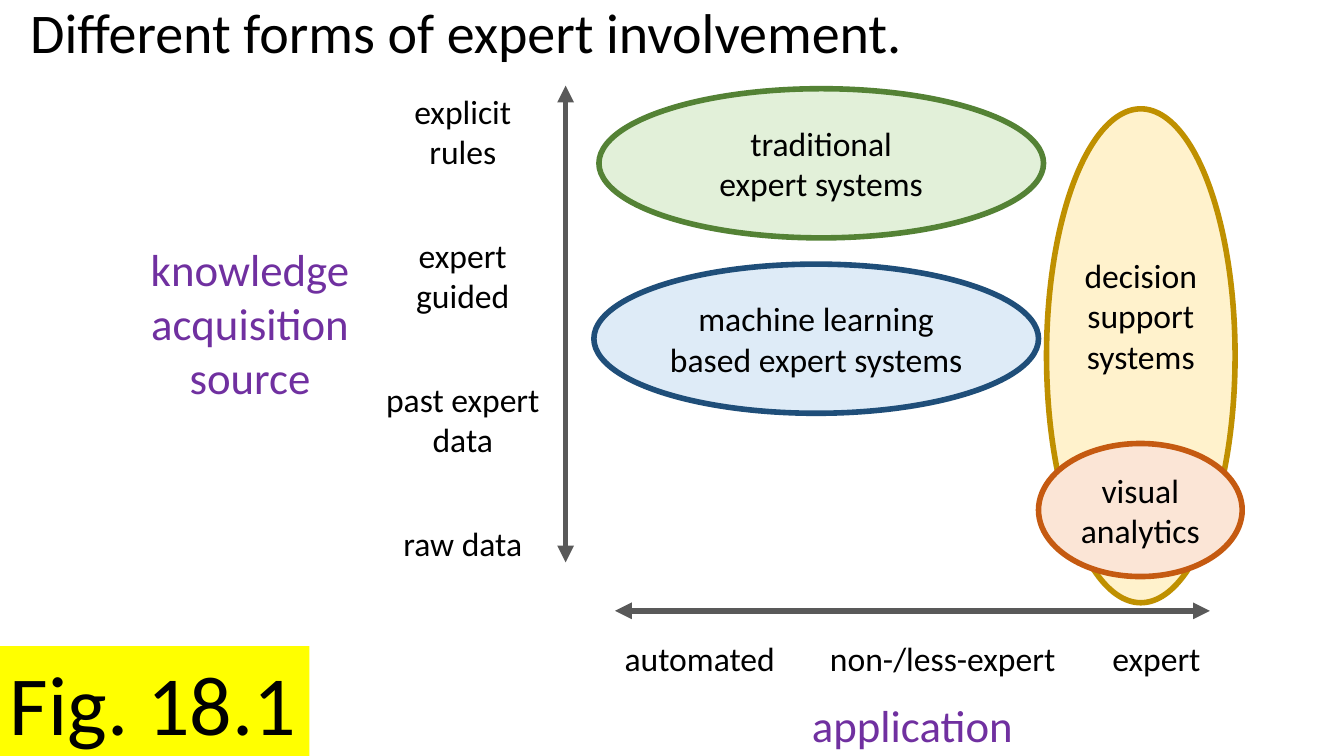
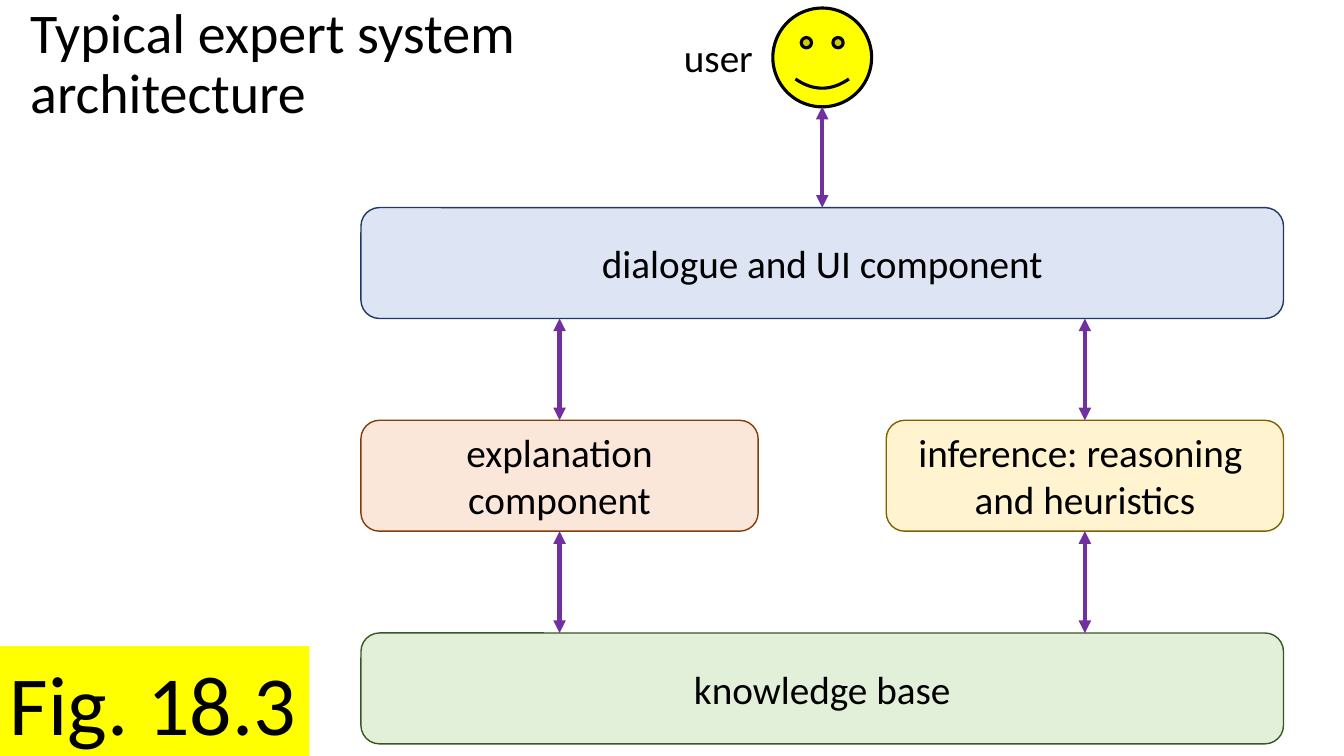
from collections import namedtuple

from lxml.etree import SubElement
from pptx import Presentation
from pptx.dml.color import RGBColor
from pptx.enum.shapes import MSO_CONNECTOR, MSO_SHAPE
from pptx.enum.text import MSO_ANCHOR, MSO_AUTO_SIZE, PP_ALIGN
from pptx.oxml.ns import qn
from pptx.util import Pt

EMU_PER_PX = 9144
FONT = "Calibri"
BLACK, YELLOW, PURPLE, GREY = "000000", "FFFF00", "7030A0", "595959"

Box = namedtuple("Box", "left top width height")
SLIDE = Box(0, 0, 1333, 750)
TITLE = Box(20, 0, 1293, 178)
FIGURE_TAG = Box(0, 641, 307, 111)
TOP, BOTTOM = 0, 2


def px(length):
    """Turn px into whole EMU."""
    return round(length * EMU_PER_PX)


def emu(box):
    """Turn every length of a box into EMU."""
    return [px(length) for length in box]


def rgb(code):
    """Turn a hex string into a colour."""
    return RGBColor.from_string(code)


def write(frame, text, size, color=BLACK, align=PP_ALIGN.CENTER):
    """Fill a text frame and format all its paragraphs alike."""
    frame.text = text
    for paragraph in frame.paragraphs:
        paragraph.alignment = align
        paragraph.font.size = Pt(size)
        paragraph.font.name = FONT
        paragraph.font.color.rgb = rgb(color)


def add_label(parts, text, center, top, width, size=24, color=BLACK):
    """Place unwrapped text centred on an x position."""
    lines = len(text.splitlines())
    height = 10 + lines * size * 5 // 3
    label = parts.add_textbox(*emu(Box(center - width / 2, top, width, height)))
    label.text_frame.word_wrap = False
    label.text_frame.auto_size = MSO_AUTO_SIZE.SHAPE_TO_FIT_TEXT
    write(label.text_frame, text, size, color)


def add_panel(parts, kind, box, fill, outline=None, weight=1, opacity=100):
    """Draw a filled preset shape without a shadow."""
    panel = parts.add_shape(kind, *emu(box))
    panel.shadow.inherit = False
    panel.fill.solid()
    panel.fill.fore_color.rgb = rgb(fill)
    if opacity < 100:
        tint = panel.fill._xPr.find(qn("a:solidFill"))[0]
        SubElement(tint, qn("a:alpha"), val=str(opacity * 1000))
    if outline:
        panel.line.color.rgb = rgb(outline)
        panel.line.width = Pt(weight)
    else:
        panel.line.fill.background()
    return panel


def add_double_arrow(parts, start, end, color, weight):
    """Draw a straight line with a triangle at both ends."""
    arrow = parts.add_connector(MSO_CONNECTOR.STRAIGHT, *emu(start + end))
    arrow.line.color.rgb = rgb(color)
    arrow.line.width = Pt(weight)
    outline = arrow.line._get_or_add_ln()
    for tip in ("a:headEnd", "a:tailEnd"):
        SubElement(outline, qn(tip), type="triangle")
    SubElement(arrow._element.spPr, qn("a:effectLst"))
    return arrow


def add_figure_slide(deck, title, figure):
    """Add a titled slide with its figure tag and return its diagram group."""
    slide = deck.slides.add_slide(deck.slide_layouts[5])
    heading = slide.shapes.title
    heading.left, heading.top, heading.width, heading.height = emu(TITLE)
    write(heading.text_frame, title, 40, align=PP_ALIGN.LEFT)
    heading.text_frame.paragraphs[0].line_spacing = 0.9
    heading.text_frame.vertical_anchor = MSO_ANCHOR.TOP
    heading.text_frame.auto_size = MSO_AUTO_SIZE.NONE
    diagram = slide.shapes.add_group_shape().shapes
    tag = add_panel(slide.shapes, MSO_SHAPE.RECTANGLE, FIGURE_TAG, YELLOW)
    tag.text_frame.word_wrap = False
    tag.text_frame.auto_size = MSO_AUTO_SIZE.SHAPE_TO_FIT_TEXT
    write(tag.text_frame, figure, 60, align=PP_ALIGN.LEFT)
    return diagram


def draw_axes(parts, box):
    """Draw the source and application axes with their labels."""
    left, top = box.left, box.top
    source_x, application_y = left + 423, top + 521
    add_double_arrow(parts, (source_x, top + 473), (source_x, top), GREY, 4)
    add_double_arrow(parts, (left + 472, application_y),
                     (left + 1062, application_y), GREY, 4)
    sources = ("explicit\nrules", "expert\vguided", "past expert\vdata", "raw data")
    for row, source in enumerate(sources):
        add_label(parts, source, left + 321, top + row * 143, 174)
    for application, center, width in (("automated", 556, 171),
                                       ("non-/less-expert", 797, 246),
                                       ("expert", 1009, 109)):
        add_label(parts, application, left + center, top + 543, width)
    add_label(parts, "knowledge\nacquisition\nsource",
              left + 110, top + 150, 219, 32, PURPLE)
    add_label(parts, "application", left + 767, top + 602, 222, 32, PURPLE)


def draw_involvement(parts, box):
    """Draw the forms of expert involvement over their axes."""
    draw_axes(parts, box)
    forms = (
        ("traditional\vexpert systems", Box(456, 3, 441, 148), "E2F0D9", "548235", 5),
        ("decision\vsupport systems", Box(900, 23, 187, 490), "FFF2CC", "BF9000", 85),
        ("machine learning\nbased expert systems", Box(451, 177, 441, 148),
         "DEEBF7", "1F4E79", 5),
        ("visual\vanalytics", Box(892, 355, 202, 132), "FBE5D6", "C55A11", 5),
    )
    for text, place, fill, outline, bottom_inset in forms:
        spot = place._replace(left=box.left + place.left, top=box.top + place.top)
        form = add_panel(parts, MSO_SHAPE.OVAL, spot, fill, outline, 4)
        frame = form.text_frame
        frame.margin_left = frame.margin_right = px(5)
        frame.margin_bottom = px(bottom_inset)
        frame.vertical_anchor = MSO_ANCHOR.MIDDLE
        write(frame, text, 24)


def add_component(parts, box, text, fill, outline, opacity=30):
    """Draw one rounded component of the architecture."""
    component = add_panel(parts, MSO_SHAPE.ROUNDED_RECTANGLE, box,
                          fill, outline, 1, opacity)
    component.text_frame.margin_top = component.text_frame.margin_bottom = 0
    component.text_frame.vertical_anchor = MSO_ANCHOR.MIDDLE
    write(component.text_frame, text, 28)
    return component


def draw_architecture(parts, box):
    """Stack the user and the component layers and link them."""
    height, pitch, half, face = 110, 211, 394, 98
    center = box.left + box.width / 2
    bottom = box.top + box.height
    dialogue_top, middle_top, base_top = (
        bottom - height - pitch * below for below in (2, 1, 0))

    base = Box(box.left, base_top, box.width, height)
    add_component(parts, base, "knowledge base", "E2F0D9", "385723", 100)
    dialogue = add_component(parts, base._replace(top=dialogue_top),
                             "dialogue and UI component", "8FAADC", "203864")
    explanation = Box(box.left, middle_top, half, height)
    inference = explanation._replace(left=box.left + box.width - half)
    middle = (
        (explanation, "explanation\vcomponent", "F4B183", "843C0B"),
        (inference, "inference: reasoning \vand heuristics", "FFD966", "806000"),
    )
    for place, text, fill, outline in middle:
        component = add_component(parts, place, text, fill, outline)
        x = place.left + half / 2
        upper = add_double_arrow(parts, (x, dialogue_top + height),
                                 (x, middle_top), PURPLE, 3)
        upper.end_connect(component, TOP)
        lower = add_double_arrow(parts, (x, middle_top + height),
                                 (x, base_top), PURPLE, 3)
        lower.begin_connect(component, BOTTOM)

    add_panel(parts, MSO_SHAPE.SMILEY_FACE,
              Box(center - face / 2, box.top, face, face), YELLOW, BLACK, 2.25)
    add_label(parts, "user", center - 103, box.top + 20, 89, 28)
    request = add_double_arrow(parts, (center, box.top + face),
                               (center, dialogue_top), PURPLE, 3)
    request.end_connect(dialogue, TOP)


def main():
    """Build both figure slides and save them."""
    deck = Presentation()
    deck.slide_width, deck.slide_height = px(SLIDE.width), px(SLIDE.height)
    draw_involvement(
        add_figure_slide(deck, "Different forms of expert involvement.", "Fig. 18.1"),
        Box(138, 85, 1094, 666))
    draw_architecture(
        add_figure_slide(deck, "Typical expert system \varchitecture", "Fig. 18.3"),
        Box(358, 8, 915, 730))
    deck.save("out.pptx")


if __name__ == "__main__":
    main()
